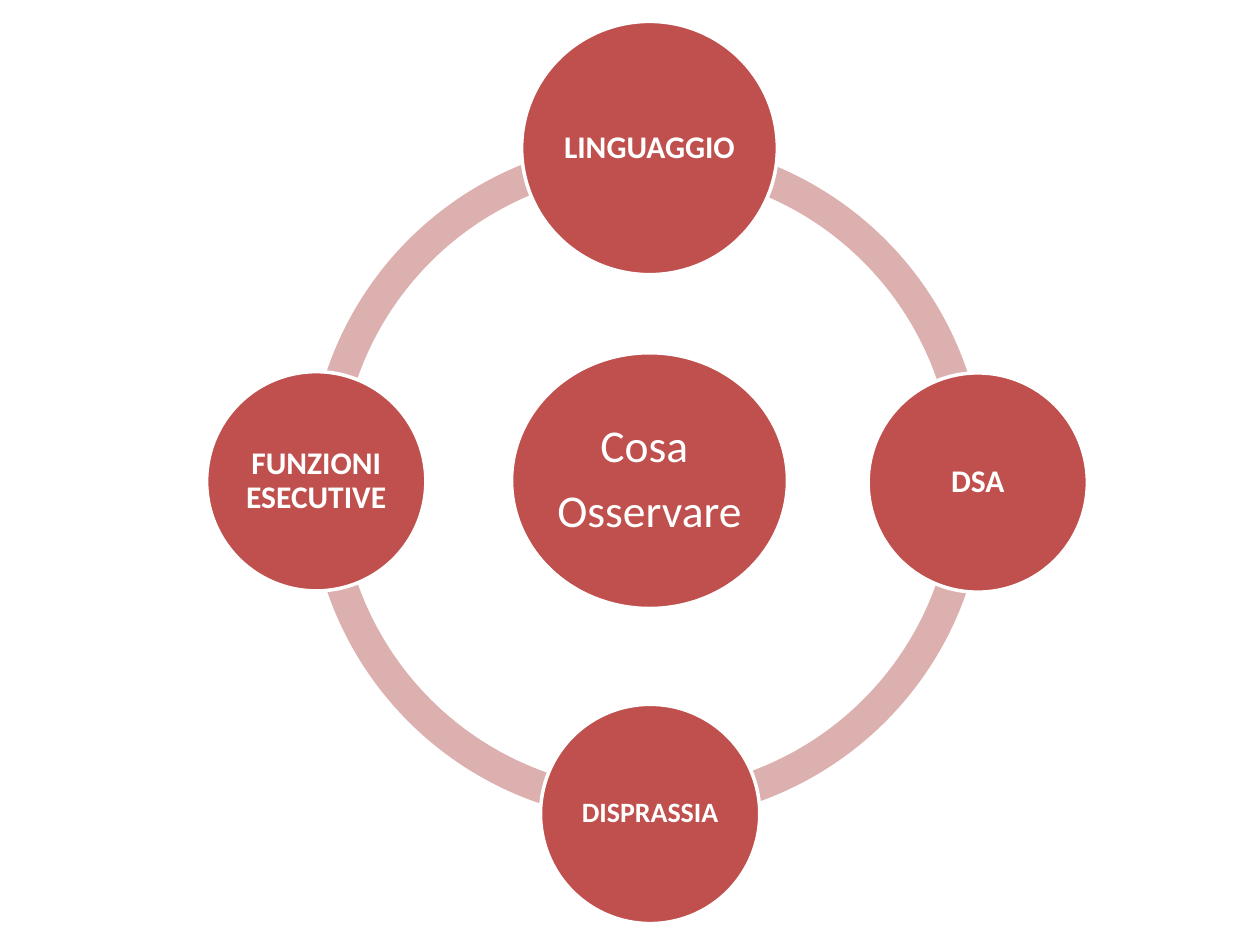
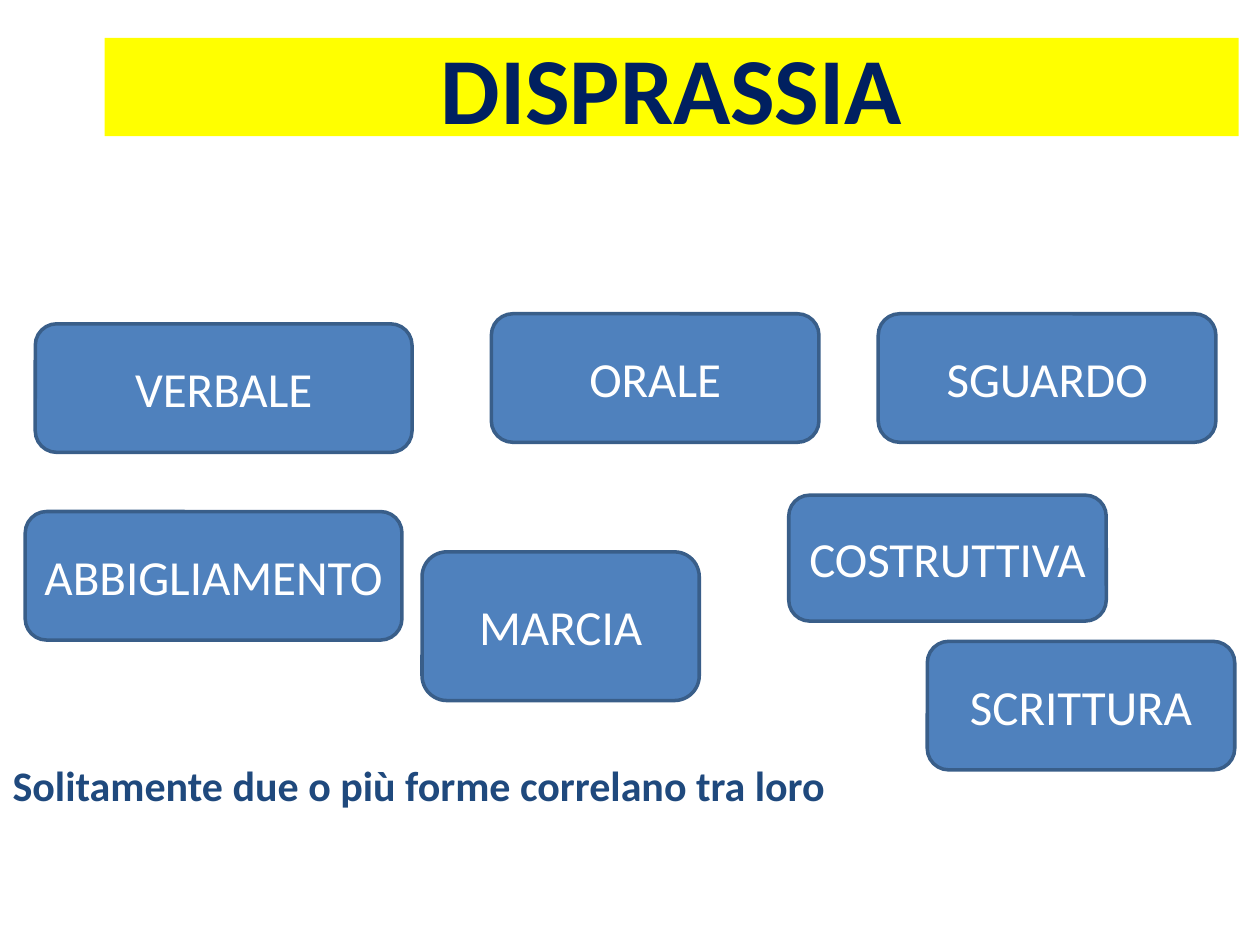
from lxml.etree import SubElement
from pptx import Presentation
from pptx.dml.color import RGBColor
from pptx.enum.shapes import MSO_SHAPE
from pptx.enum.text import MSO_ANCHOR, MSO_AUTO_SIZE, PP_ALIGN
from pptx.oxml.ns import qn
from pptx.util import Inches, Pt

FONT = "Calibri"
COLORS = {
    "white": "FFFFFF", "red": "BF504D", "pink": "DBB0AF",
    "yellow": "FFFF00", "navy": "002060", "ink": "1F497D",
    "blue": "4F81BD", "blue_edge": "395E89",
}
# Grid: 100 columns by 75 rows of square cells
COLUMNS, ROWS = 100, 75
CELL = Inches(0.1)
TITLE_LAYOUT, BLANK_LAYOUT = 1, 6

HUB = (51.55, 38.15)
# Text, centre column and row, diameters, text size
TOPICS = [
    ("LINGUAGGIO", 51.55, 11.75, 20.3, 20.1, 18),
    ("DSA", 77.6, 38.3, 17.4, 17.4, 18),
    ("DISPRASSIA", 51.6, 64.6, 17.4, 17.4, 16),
    ("FUNZIONI ESECUTIVE", 25.1, 38.2, 17.4, 17.4, 18),
]
# Left column, start and end angle in degrees
RING_ARCS = [(24.5, 180, 270), (24.5, 90, 180), (24.1, 0.36, 89.14), (24.1, 270.86, 0.38)]
# Text, column, row, columns wide, rows high
FORMS = [
    ("VERBALE", 2.8, 25.7, 29.9, 10.2),
    ("ORALE", 39, 24.9, 26, 10.2),
    ("SCRITTURA", 73.6, 50.9, 24.4, 10.2),
    ("ABBIGLIAMENTO", 2, 40.6, 29.9, 10.2),
    ("MARCIA", 33.5, 43.8, 22, 11.8),
    ("SGUARDO", 73.6 - 3.9, 24.9, 26.8, 10.2),
    ("COSTRUTTIVA", 62.6, 39.3, 25.2, 10),
]


def cells(*counts):
    return [round(count * CELL) for count in counts]


def color(name):
    return RGBColor.from_string(COLORS[name])


def write(shape, text, size, ink="white", bold=False, align=PP_ALIGN.CENTER,
          anchor=MSO_ANCHOR.MIDDLE, spacing=1.0, gap=0, inset=None):
    """Fill a shape with text, one paragraph a line."""
    frame = shape.text_frame
    frame.word_wrap = True
    frame.auto_size = MSO_AUTO_SIZE.NONE
    frame.vertical_anchor = anchor
    if inset is not None:
        frame.margin_left = frame.margin_right = Inches(inset)
        frame.margin_top = frame.margin_bottom = Inches(inset)
    frame.text = text
    for number, para in enumerate(frame.paragraphs):
        para.alignment = align
        para.line_spacing = spacing
        para.space_before = Pt(gap if number else 0)
        span = para.runs[0].font
        span.name, span.size, span.bold = FONT, Pt(size), bold
        span.color.rgb = color(ink)


def add_figure(page, kind, box, fill, edge=None):
    shape = page.shapes.add_shape(kind, *cells(*box))
    shape.shadow.inherit = False
    shape.fill.solid()
    shape.fill.fore_color.rgb = color(fill)
    if edge:
        shape.line.color.rgb = color(edge)
        shape.line.width = Pt(2)
    else:
        shape.line.fill.background()
    return shape


def add_arc(page, column, start, end):
    arc = add_figure(page, MSO_SHAPE.BLOCK_ARC, (column, 11.1, 54.1, 54.1), "pink")
    # Angles are held in 60000ths of a degree, adjustments in 100000ths
    arc.adjustments[0] = start * 0.6
    arc.adjustments[1] = end * 0.6
    arc.adjustments[2] = 0.046


def add_circle(page, text, column, row, width, height, size, **style):
    box = (column - width / 2, row - height / 2, width, height)
    circle = add_figure(page, MSO_SHAPE.OVAL, box, "red", "white")
    write(circle, text, size, spacing=0.9, **style)


def move(shape, *box):
    shape.left, shape.top, shape.width, shape.height = cells(*box)


def build_cycle(deck):
    page = deck.slides.add_slide(deck.slide_layouts[BLANK_LAYOUT])
    for arc in RING_ARCS:
        add_arc(page, *arc)
    add_circle(page, "Cosa \nOsservare", *HUB, 21.9, 20.3, 26, gap=9.1, inset=0.04)
    for topic in TOPICS:
        add_circle(page, *topic, bold=True, inset=0.02)


def build_forms(deck):
    page = deck.slides.add_slide(deck.slide_layouts[TITLE_LAYOUT])
    # Title band
    title = page.shapes.title
    move(title, 8.3, 3, 90, 7.8)
    title.fill.solid()
    title.fill.fore_color.rgb = color("yellow")
    write(title, "DISPRASSIA", 54, ink="navy", bold=True)
    # Closing sentence, low in the body
    body = page.placeholders[1]
    move(body, 0, 16.2, COLUMNS, 56.1)
    write(body, "Solitamente due o più forme correlano tra loro", 24, ink="ink",
          bold=True, align=PP_ALIGN.LEFT, anchor=MSO_ANCHOR.TOP)
    body.text_frame.margin_top = cells(44.1)[0]
    settings = body.text_frame.paragraphs[0]._p.get_or_add_pPr()
    settings.set("marL", "0")
    settings.set("indent", "0")
    SubElement(settings, qn("a:buNone"))
    # Forms of dyspraxia
    for text, *box in FORMS:
        form = add_figure(page, MSO_SHAPE.ROUNDED_RECTANGLE, box, "blue", "blue_edge")
        write(form, text, 28)


def main():
    deck = Presentation()
    deck.slide_width, deck.slide_height = cells(COLUMNS, ROWS)
    build_cycle(deck)
    build_forms(deck)
    deck.save("out.pptx")


if __name__ == "__main__":
    main()
